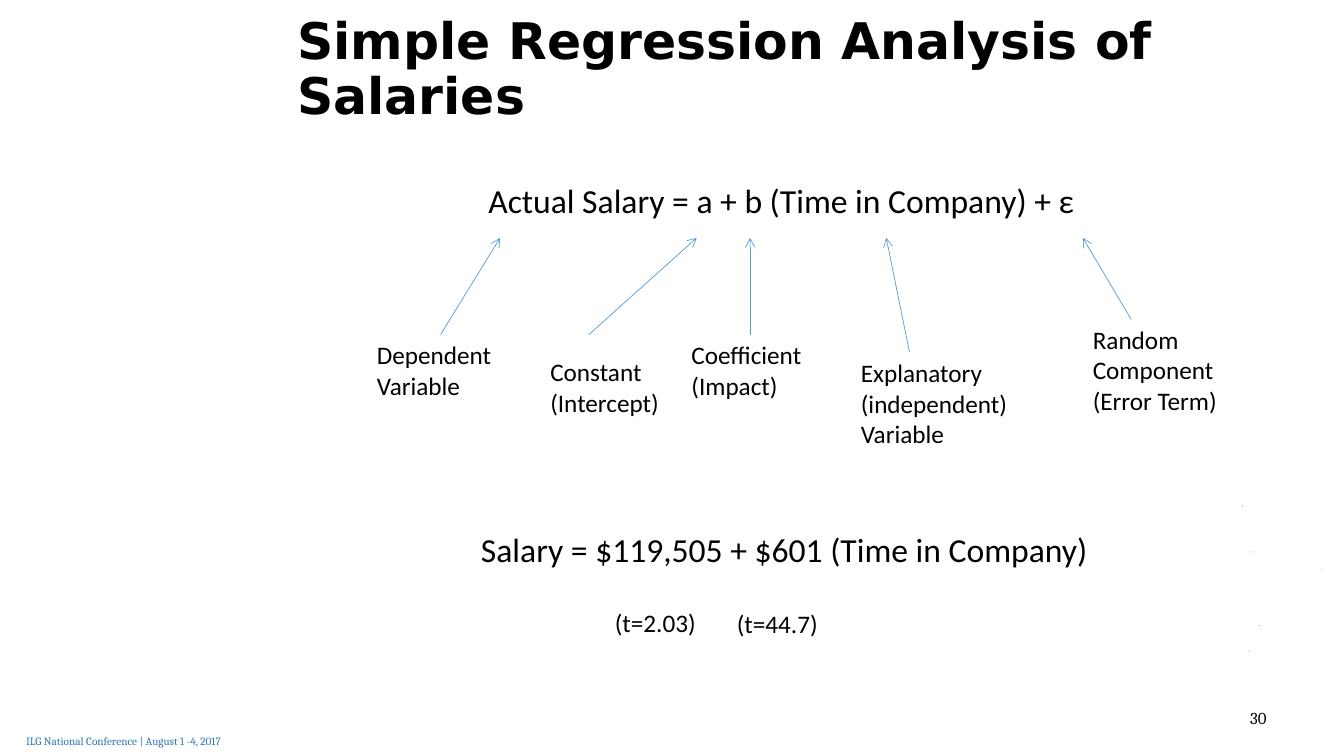
"""Build the slide that explains a simple regression of salaries."""
import pptx
import pptx.dml.color
import pptx.enum.shapes
import pptx.enum.text
import pptx.oxml
import pptx.oxml.ns
import pptx.util

RGB = pptx.dml.color.RGBColor
ALIGN = pptx.enum.text.PP_ALIGN
ANCHOR = pptx.enum.text.MSO_ANCHOR
BLACK = RGB(0x00, 0x00, 0x00)
FOOTER_BLUE = RGB(0x2E, 0x75, 0xB6)
ARROW_BLUE = RGB(0x5B, 0x9B, 0xD5)
SPECK_TAN = RGB(0xCE, 0xBE, 0xB1)

PX = 9144
SLIDE_SIZE = (1333, 750)
ARROW_TIP_Y = 236

TITLE = ("Simple Regression Analysis of Salaries", (285, 15, 980, 110))
FOOTER = ("ILG National Conference | August 1 -4, 2017", (16, 724, 303, 24))
PAGE_NUMBER = ("30", (1064, 692, 202, 40))
EQUATIONS = [
    ("Actual Salary = a + b (Time in Company) + ε", (285, 140, 980, 158)),
    ("Salary = $119,505 + $601 (Time in Company)", (288, 486, 980, 114)),
]
LABELS = [
    ("Dependent\nVariable", (364, 332, 146, 71)),
    ("Constant\n(Intercept)", (536, 349, 156, 71)),
    ("Coefficient\n(Impact)", (676, 332, 137, 71)),
    ("Explanatory\n(independent)\nVariable", (844, 350, 174, 101)),
    ("Random\nComponent\n(Error Term)", (1074, 317, 174, 101)),
    ("(t=2.03)", (600, 598, 110, 40)),
    ("(t=44.7)", (721, 599, 110, 40)),
]
ARROWS = [
    (437, 332, 496),
    (584, 332, 691),
    (744, 332, 744),
    (902, 349, 879),
    (1122, 317, 1074),
]
SPECKS = [
    (1232, 501, 1, 2),
    (1242, 547, 2, 1),
    (1239, 645, 1, 2),
    (1248, 620, 2, 1),
    (1310, 565, 2, 1),
]


def emu(lengths):
    return [pptx.util.Emu(length * PX) for length in lengths]


def add_text(s, text, box, size=18, font="Calibri", color=BLACK, bold=False,
             align=ALIGN.LEFT, anchor=ANCHOR.TOP, spacing=None,
             insets=(10, 5, 10, 5), grow=False):
    tf = s.shapes.add_textbox(*emu(box)).text_frame
    tf.word_wrap = True
    tf.vertical_anchor = anchor
    if grow:
        tf.auto_size = pptx.enum.text.MSO_AUTO_SIZE.SHAPE_TO_FIT_TEXT
    (tf.margin_left, tf.margin_top,
     tf.margin_right, tf.margin_bottom) = emu(insets)
    for i, line in enumerate(text.split("\n")):
        p = tf.add_paragraph() if i else tf.paragraphs[0]
        p.alignment = align
        p.line_spacing = spacing
        r = p.add_run()
        r.text = line
        r.font.size = pptx.util.Pt(size)
        r.font.name = font
        r.font.bold = bold
        r.font.color.rgb = color


def add_arrow(s, x, y, tip_x):
    line = s.shapes.add_connector(
        pptx.enum.shapes.MSO_CONNECTOR.STRAIGHT, *emu((x, y, tip_x, ARROW_TIP_Y)))
    line.line.color.rgb = ARROW_BLUE
    line.line.width = pptx.util.Pt(0.5)
    sp_pr = line._element.spPr
    ln = sp_pr.find(pptx.oxml.ns.qn("a:ln"))
    ns = pptx.oxml.ns.nsdecls("a")
    ln.append(pptx.oxml.parse_xml(f'<a:tailEnd {ns} type="arrow"/>'))
    sp_pr.append(pptx.oxml.parse_xml(f"<a:effectLst {ns}/>"))


def add_speck(s, box):
    sp = s.shapes.add_shape(pptx.enum.shapes.MSO_SHAPE.OVAL, *emu(box))
    sp.shadow.inherit = False
    sp.fill.solid()
    sp.fill.fore_color.rgb = SPECK_TAN
    sp.line.fill.background()


def main():
    prs = pptx.Presentation()
    prs.slide_width, prs.slide_height = emu(SLIDE_SIZE)
    s = prs.slides.add_slide(prs.slide_layouts[6])
    for box in SPECKS:
        add_speck(s, box)
    add_text(s, *FOOTER, size=8, font="Cambria", color=FOOTER_BLUE, grow=True)
    add_text(s, *TITLE, size=36, font="DejaVu Sans", bold=True,
             anchor=ANCHOR.MIDDLE, spacing=0.9, insets=(10, 10, 10, 10))
    for text, box in EQUATIONS:
        add_text(s, text, box, size=24, align=ALIGN.CENTER, spacing=0.9,
                 insets=(10, 60, 10, 10))
    for text, box in LABELS:
        add_text(s, text, box, grow=True)
    for arrow in ARROWS:
        add_arrow(s, *arrow)
    add_text(s, *PAGE_NUMBER, size=12, font="Cambria", align=ALIGN.RIGHT,
             anchor=ANCHOR.MIDDLE)
    prs.save("out.pptx")


if __name__ == "__main__":
    main()
